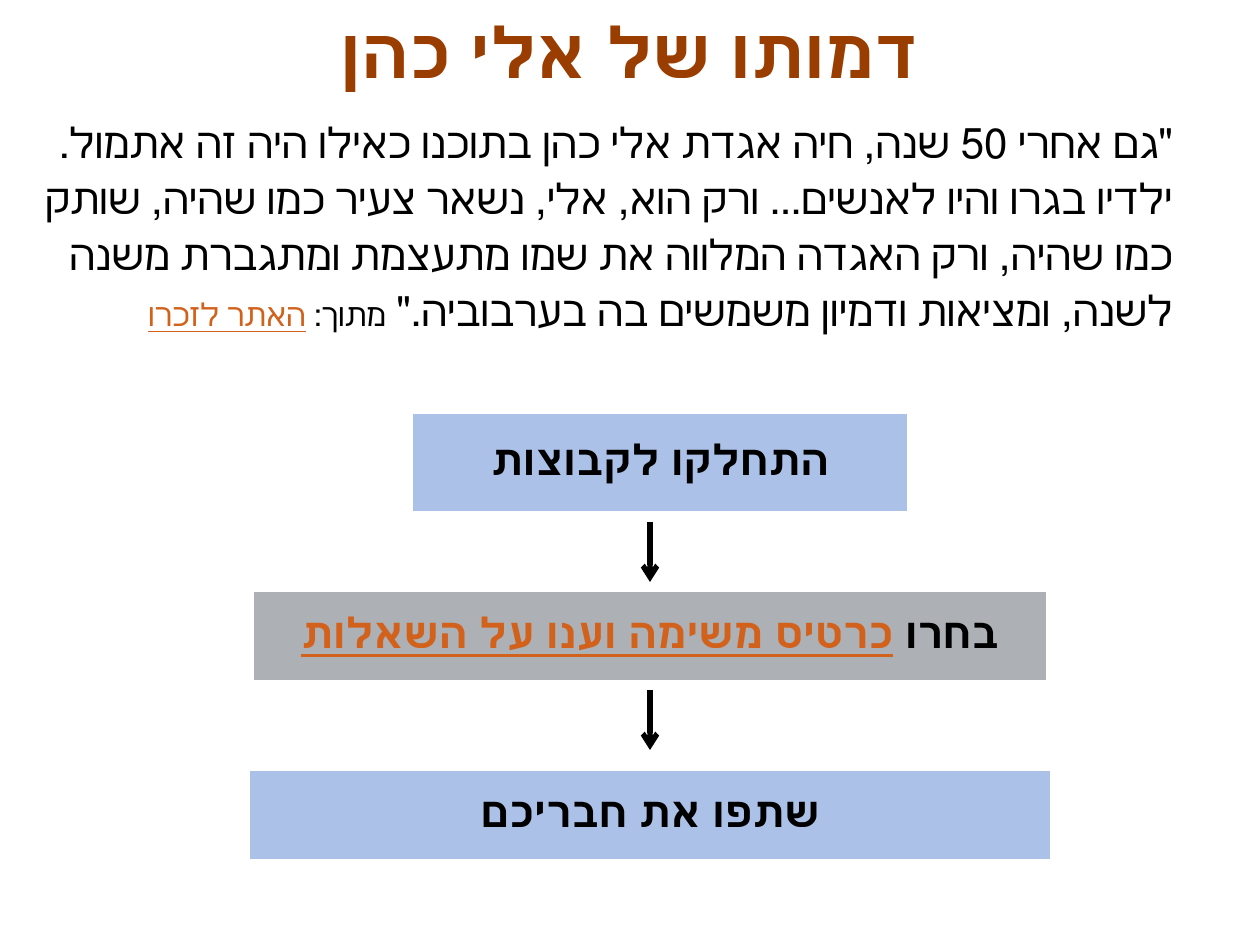
from lxml import etree
from pptx import Presentation
from pptx.dml.color import RGBColor
from pptx.enum import shapes, text
from pptx.oxml.ns import qn
from pptx.util import Emu, Pt

SCALE = 914400 / 126
BLACK, ORANGE, BROWN, WHITE = "000000", "D2611C", "9A3D01", "FFFFFF"
BLUE, GRAY = "ACC1E8", "ADB0B5"

LINK = dict(color=ORANGE, underline=True)
TITLE_FONT = dict(name="Noto Sans", size=40, color=BROWN, bold=True)
STEP_FONT = dict(name="Times New Roman", size=24, color=BLACK, bold=True)
QUOTE_FONT = dict(name="Vollkorn", size=24, color=BLACK)
SOURCE_FONT = {**QUOTE_FONT, "size": 18}

TITLE = [("דמותו של אלי כהן", TITLE_FONT)]
QUOTE = [
    ('"גם אחרי 50 שנה, חיה אגדת אלי כהן בתוכנו כאילו היה זה אתמול. '
     "ילדיו בגרו והיו לאנשים... ורק הוא, אלי, נשאר צעיר כמו שהיה, שותק "
     "כמו שהיה, ורק האגדה המלווה את שמו מתעצמת ומתגברת משנה לשנה, "
     'ומציאות ודמיון משמשים בה בערבוביה." ', QUOTE_FONT),
    ("מתוך: ", SOURCE_FONT),
    ("האתר לזכרו", {**SOURCE_FONT, **LINK}),
]
STEPS = [
    ((412, 413, 496, 99), BLUE, [("התחלקו לקבוצות", STEP_FONT)]),
    ((253, 591, 794, 90), GRAY, [
        ("בחרו ", STEP_FONT),
        ("כרטיס משימה וענו על השאלות", {**STEP_FONT, **LINK})]),
    ((249, 770, 802, 90), BLUE, [("שתפו את חבריכם", STEP_FONT)]),
]
ARROW_X, ARROW_LENGTH, ARROW_TOPS = 650, 60, (522, 690)


def px(n):
    return Emu(round(n * SCALE))


def rgb(value):
    return RGBColor.from_string(value)


def write(tf, runs, align, spacing=None):
    p = tf.paragraphs[0]
    p.alignment = align
    p.line_spacing = spacing
    p._p.get_or_add_pPr().set("rtl", "1")
    for words, style in runs:
        r = p.add_run()
        r.text = words
        for key, value in style.items():
            if key == "color":
                r.font.color.rgb = rgb(value)
            else:
                setattr(r.font, key, Pt(value) if key == "size" else value)


def add_text(s, box, runs, align, anchor, spacing=None):
    tf = s.shapes.add_textbox(*map(px, box)).text_frame
    tf.word_wrap = True
    tf.vertical_anchor = anchor
    write(tf, runs, align, spacing)


def add_borders(cell):
    tcPr = cell._tc.get_or_add_tcPr()
    for i, side in enumerate(("lnL", "lnR", "lnT", "lnB")):
        ln = etree.Element(qn("a:" + side), w=str(Pt(1)))
        fill = etree.SubElement(ln, qn("a:solidFill"))
        etree.SubElement(fill, qn("a:srgbClr"), val=WHITE)
        tcPr.insert(i, ln)


def add_step(s, box, color, runs):
    table = s.shapes.add_table(1, 1, *map(px, box)).table
    table.first_row = table.horz_banding = False
    cell = table.cell(0, 0)
    cell.fill.solid()
    cell.fill.fore_color.rgb = rgb(color)
    cell.vertical_anchor = text.MSO_ANCHOR.MIDDLE
    cell.margin_left = cell.margin_right = px(15)
    cell.margin_top = cell.margin_bottom = 0
    add_borders(cell)
    write(cell.text_frame, runs, text.PP_ALIGN.CENTER)


def add_arrow(s, x, top, length):
    sp = s.shapes.add_connector(shapes.MSO_CONNECTOR.STRAIGHT,
                                px(x), px(top), px(x), px(top + length))
    sp.line.color.rgb = rgb(BLACK)
    sp.line.width = Pt(3)
    etree.SubElement(sp.line._get_or_add_ln(), qn("a:tailEnd"), type="arrow")
    etree.SubElement(sp._element.spPr, qn("a:effectLst"))


def main():
    prs = Presentation()
    prs.slide_width, prs.slide_height = px(1260), px(945)
    s = prs.slides.add_slide(prs.slide_layouts[6])
    add_text(s, (63, -4, 1134, 110), TITLE,
             text.PP_ALIGN.CENTER, text.MSO_ANCHOR.MIDDLE)
    for step in STEPS:
        add_step(s, *step)
    add_text(s, (25, 105, 1160, 367), QUOTE,
             text.PP_ALIGN.RIGHT, text.MSO_ANCHOR.TOP, Pt(32))
    for top in ARROW_TOPS:
        add_arrow(s, ARROW_X, top, ARROW_LENGTH)
    prs.save("out.pptx")


if __name__ == "__main__":
    main()
